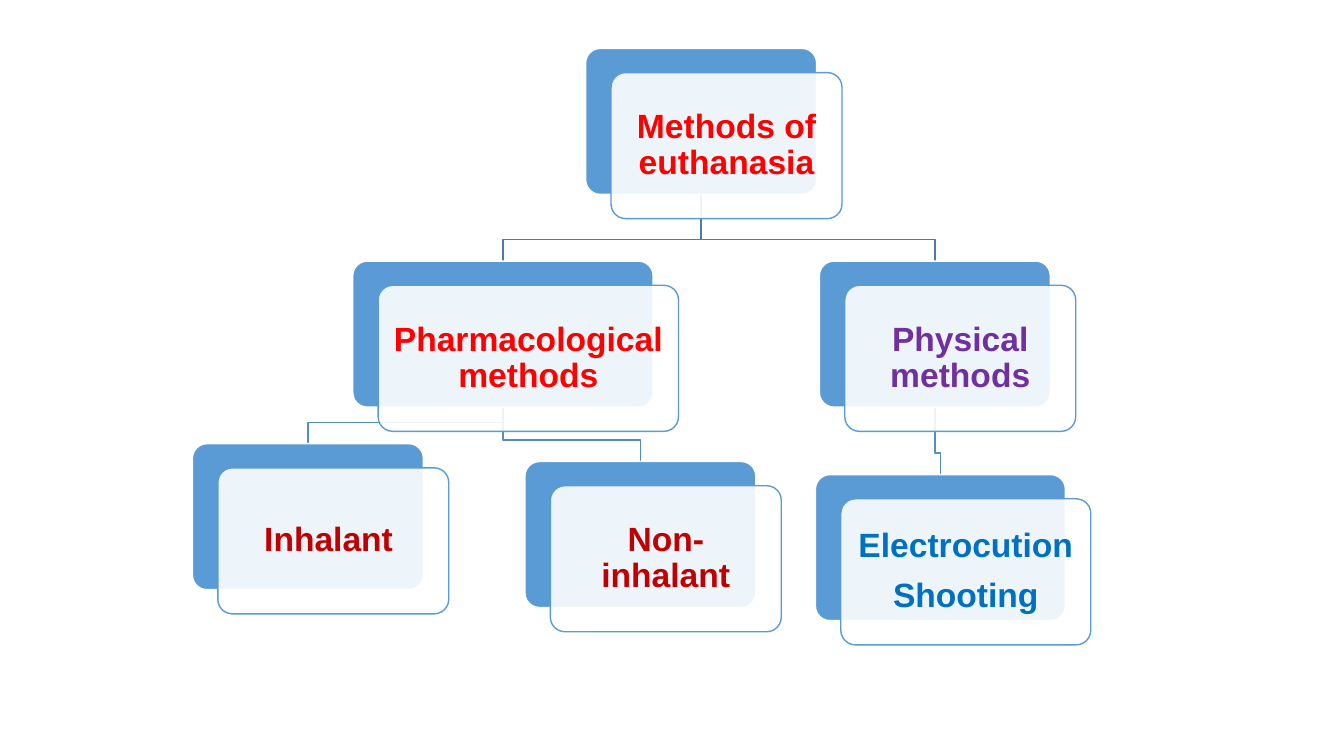
from dataclasses import dataclass

from lxml import etree
from pptx import Presentation
from pptx import util as u
from pptx.dml.color import RGBColor
from pptx.enum import shapes, text
from pptx.oxml.ns import qn

COLORS = {
    "blue": "5B9BD5", "white": "FFFFFF", "red": "FF0000", "dark_red": "C00000",
    "purple": "7030A0", "text_blue": "0070C0",
    "upper_link": "497CAB", "lower_link": "538DC1",
}


@dataclass
class Card:
    left: float
    top: float
    lines: list
    color: str
    width: float = 5.82
    height: float = 3.68

    @property
    def middle(self):
        return self.left + self.width / 2

    @property
    def bottom(self):
        return self.top + self.height


class ChartSlide:
    """Holds the style and the slide on which the tree is built."""
    font = "Arial"
    size = u.Pt(24)
    line_width = u.Pt(1)
    corner = 0.1
    panel_shift = (0.64, 0.61)
    panel_opacity = 90
    inset = u.Cm(0.24)
    bend_gap = 0.54

    def __init__(self, slide):
        self.slide = slide

    def rgb(self, name):
        return RGBColor.from_string(COLORS[name])

    def outline(self, shape, color):
        shape.line.color.rgb = self.rgb(color)
        shape.line.width = self.line_width
        shape.shadow.inherit = False

    def link(self, parent, child, color):
        bend = child.top - self.bend_gap
        points = [(parent.middle, parent.bottom), (parent.middle, bend),
                  (child.middle, bend), (child.middle, child.top)]
        start, *rest = [(u.Cm(x), u.Cm(y)) for x, y in points]
        builder = self.slide.shapes.build_freeform(*start)
        builder.add_line_segments(rest, close=False)
        shape = builder.convert_to_shape()
        shape.fill.background()
        self.outline(shape, color)

    def rounded(self, card, shift, fill, line):
        shape = self.slide.shapes.add_shape(
            shapes.MSO_SHAPE.ROUNDED_RECTANGLE,
            u.Cm(card.left + shift[0]), u.Cm(card.top + shift[1]),
            u.Cm(card.width), u.Cm(card.height))
        shape.adjustments[0] = self.corner
        shape.fill.solid()
        shape.fill.fore_color.rgb = self.rgb(fill)
        self.outline(shape, line)
        return shape

    def card(self, card):
        self.rounded(card, (0, 0), "blue", "white")
        panel = self.rounded(card, self.panel_shift, "white", "blue")
        fill_color = panel.element.spPr.find(qn("a:solidFill"))[0]
        etree.SubElement(fill_color, qn("a:alpha"), val=str(self.panel_opacity * 1000))
        self.add_text(panel.text_frame, card)

    def add_text(self, frame, card):
        frame.word_wrap = True
        frame.vertical_anchor = text.MSO_ANCHOR.MIDDLE
        frame.margin_left = frame.margin_right = self.inset
        frame.margin_top = frame.margin_bottom = self.inset
        for index, line in enumerate(card.lines):
            paragraph = frame.add_paragraph() if index else frame.paragraphs[0]
            paragraph.alignment = text.PP_ALIGN.CENTER
            paragraph.line_spacing = 0.9
            paragraph.space_after = u.Pt(9.6)
            run = paragraph.add_run()
            run.text = line
            run.font.name = self.font
            run.font.size = self.size
            run.font.bold = True
            run.font.color.rgb = self.rgb(card.color)


def main():
    presentation = Presentation()
    presentation.slide_width = u.Cm(33.87)
    presentation.slide_height = u.Cm(19.05)
    slide = presentation.slides.add_slide(presentation.slide_layouts[6])
    chart = ChartSlide(slide)

    # Cards of the tree, level by level
    second_level = 6.58
    methods = Card(14.76, 1.22, ["Methods of euthanasia"], "red")
    drugs = Card(8.89, second_level, ["Pharmacological methods"], "red", width=7.57)
    physical = Card(20.65, second_level, ["Physical methods"], "purple")
    inhalant = Card(4.85, 11.18, ["Inhalant "], "dark_red")
    non_inhalant = Card(13.23, 11.63, ["Non-inhalant"], "dark_red")
    electric = Card(20.55, 11.96, ["Electrocution", "Shooting"], "text_blue", width=6.3)

    # Links lie behind the cards
    for parent, child, color in [
        (physical, electric, "lower_link"),
        (methods, physical, "upper_link"),
        (drugs, non_inhalant, "lower_link"),
        (drugs, inhalant, "lower_link"),
        (methods, drugs, "upper_link"),
    ]:
        chart.link(parent, child, color)

    # Cards with their translucent text panels
    for card in (methods, drugs, inhalant, non_inhalant, physical, electric):
        chart.card(card)

    presentation.save("out.pptx")


if __name__ == "__main__":
    main()
